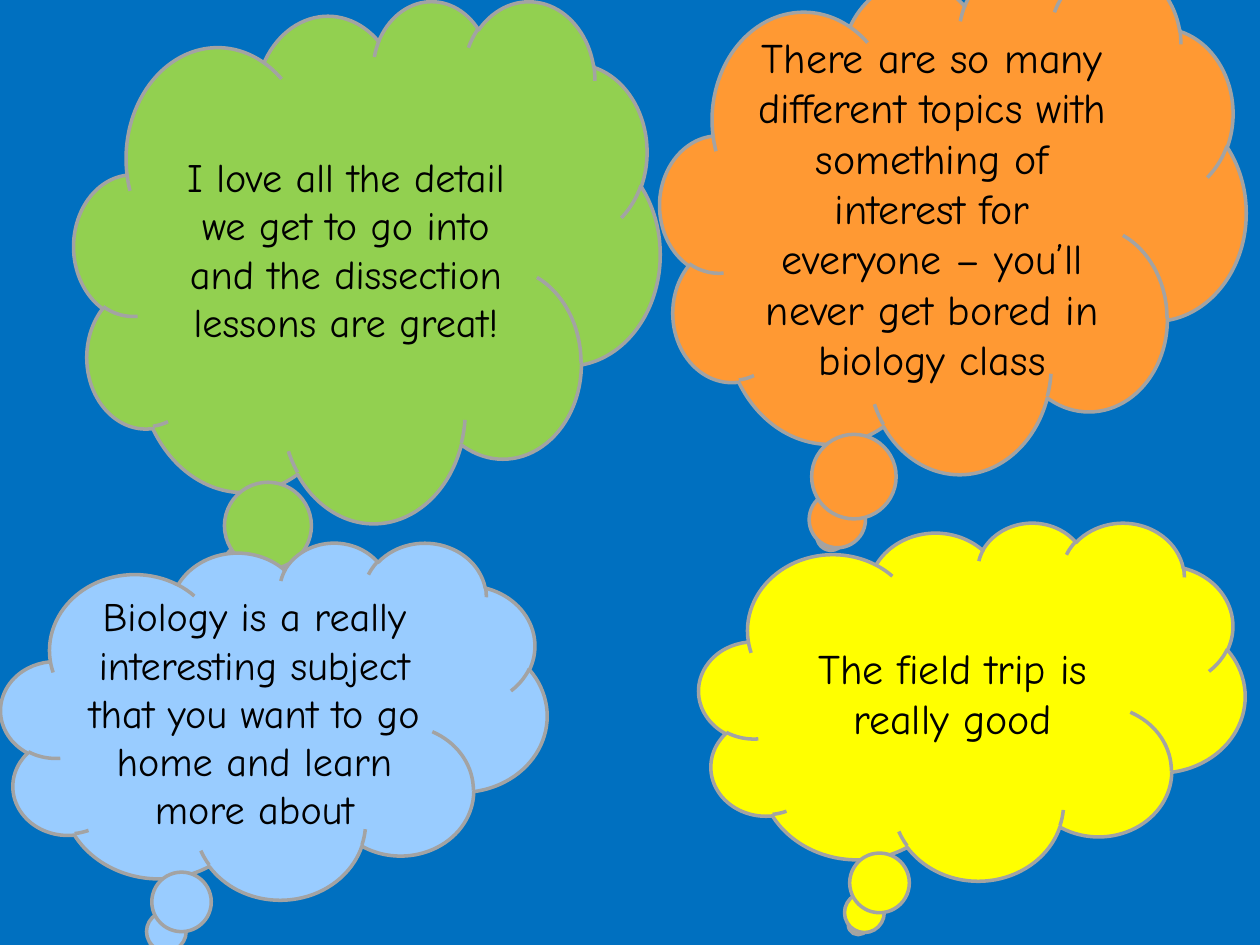
from pptx import Presentation
from pptx.dml.color import RGBColor
from pptx.enum.shapes import MSO_SHAPE
from pptx.enum.text import MSO_ANCHOR, PP_ALIGN
from pptx.util import Pt

EMU_PER_PX = 914400 / 126
BLUE = RGBColor(0x00, 0x70, 0xC0)
ORANGE = RGBColor(0xFF, 0x99, 0x33)
YELLOW = RGBColor(0xFF, 0xFF, 0x00)
GREEN = RGBColor(0x92, 0xD0, 0x50)
SKY = RGBColor(0x99, 0xCC, 0xFF)
GREY = RGBColor(0xA3, 0xA3, 0xA3)
BLACK = RGBColor(0x00, 0x00, 0x00)

OPINIONS = [
    ((660, -34, 586, 507), ORANGE, 24,
     "There are so many different topics with something of interest for "
     "everyone – you’ll never get bored in biology class"),
    ((699, 522, 546, 358), YELLOW, 24, "The field trip is really good"),
    ((74, 0, 586, 522), GREEN, 23,
     "I love all the detail we get to go into and the dissection lessons are great!"),
    ((1, 542, 546, 357), SKY, 23,
     "Biology is a really interesting subject that you want to go home and learn more about"),
]


def px(length):
    return round(length * EMU_PER_PX)


class OpinionSlide:
    font_name = "Comic Neue"
    outline_width = Pt(2)

    def __init__(self, presentation):
        self.slide = presentation.slides.add_slide(presentation.slide_layouts[6])

    def background(self, color):
        fill = self.slide.background.fill
        fill.solid()
        fill.fore_color.rgb = color

    def thought(self, box, color, size, words):
        cloud = self.slide.shapes.add_shape(MSO_SHAPE.CLOUD_CALLOUT, *map(px, box))
        cloud.shadow.inherit = False
        cloud.fill.solid()
        cloud.fill.fore_color.rgb = color
        cloud.line.color.rgb = GREY
        cloud.line.width = self.outline_width
        frame = cloud.text_frame
        frame.word_wrap = True
        frame.vertical_anchor = MSO_ANCHOR.MIDDLE
        opinion = frame.paragraphs[0]
        opinion.alignment = PP_ALIGN.CENTER
        run = opinion.add_run()
        run.text = words
        for attribute, value in {"name": self.font_name, "size": Pt(size)}.items():
            setattr(run.font, attribute, value)
        run.font.color.rgb = BLACK


def main():
    presentation = Presentation()
    presentation.slide_width = px(1260)
    presentation.slide_height = px(945)
    biology = OpinionSlide(presentation)
    biology.background(BLUE)
    for opinion in OPINIONS:
        biology.thought(*opinion)
    presentation.save("out.pptx")


if __name__ == "__main__":
    main()
